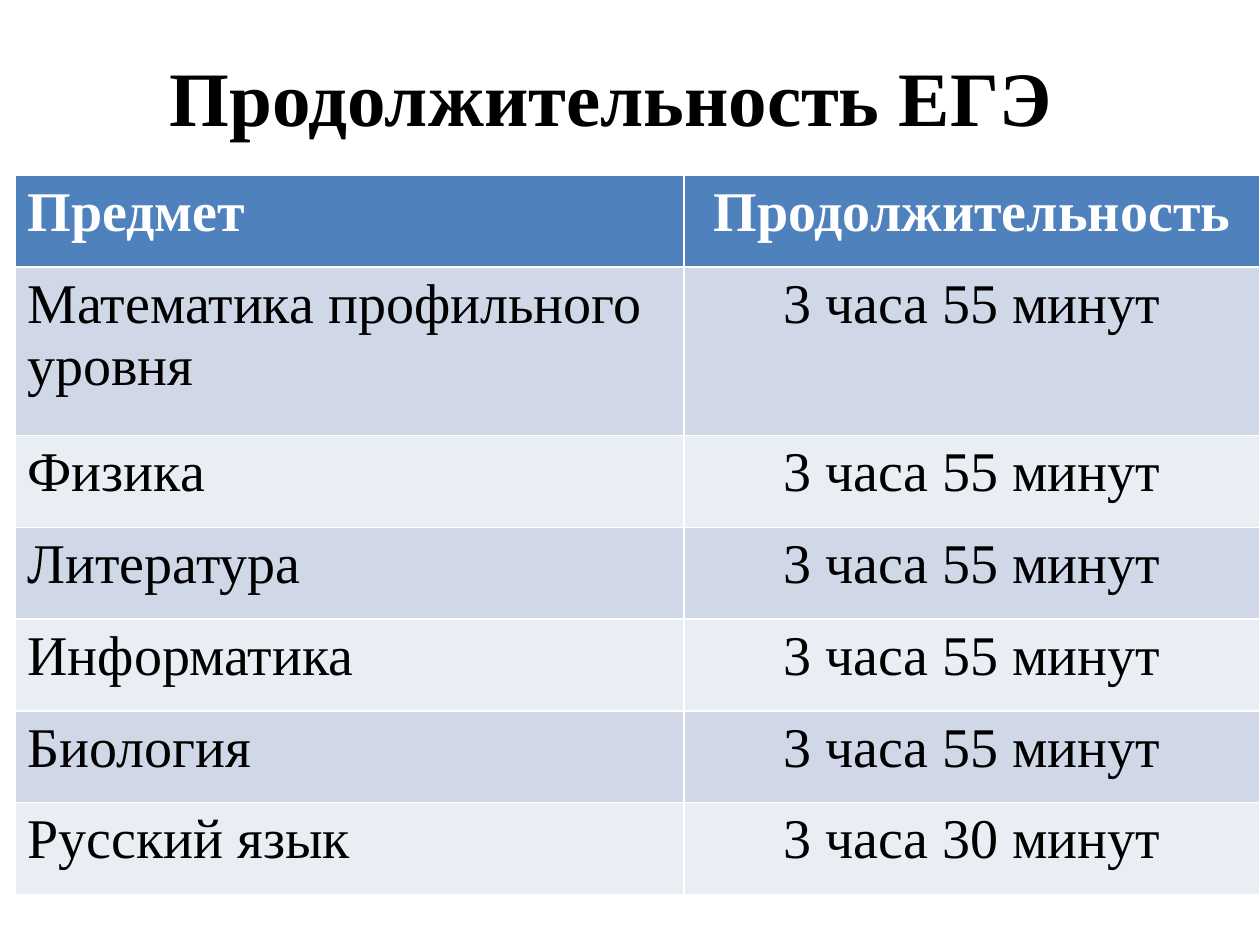
"""Build a slide with a table of exam durations."""
import pptx
import pptx.dml.color
import pptx.enum.text
import pptx.util

Cm = pptx.util.Cm
CENTER = pptx.enum.text.PP_ALIGN.CENTER
FONT = "Times New Roman"
COLORS = {
    "text": "000000",
    "header_text": "FFFFFF",
    "header": "4F81BD",
    "odd_row": "D0D8E8",
    "even_row": "E9EDF4",
}
COLUMN_WIDTHS = [13.49, 11.61]
ROW_HEIGHTS = [1.85, 3.4] + [1.85] * 5
ROWS = [
    ("Предмет", "Продолжительность"),
    ("Математика профильного уровня", "3 часа 55 минут"),
    ("Физика", "3 часа 55 минут"),
    ("Литература", "3 часа 55 минут"),
    ("Информатика", "3 часа 55 минут"),
    ("Биология", "3 часа 55 минут"),
    ("Русский язык", "3 часа 30 минут"),
]


def color(name):
    return pptx.dml.color.RGBColor.from_string(COLORS[name])


def format_text(paragraph, size, bold, color_name):
    for run in paragraph.runs:
        run.font.name = FONT
        run.font.size = pptx.util.Pt(size)
        run.font.bold = bold
        run.font.color.rgb = color(color_name)


presentation = pptx.Presentation()
presentation.slide_width = Cm(25.4)
presentation.slide_height = Cm(19.05)
slide = presentation.slides.add_slide(presentation.slide_layouts[6])

title = slide.shapes.add_textbox(Cm(0.89), Cm(0.74), Cm(22.86), Cm(2.36))
title.text_frame.word_wrap = True
title.text_frame.vertical_anchor = pptx.enum.text.MSO_ANCHOR.MIDDLE
title.text_frame.text = "Продолжительность ЕГЭ"
title_paragraph = title.text_frame.paragraphs[0]
title_paragraph.alignment = CENTER
format_text(title_paragraph, 44, True, "text")

table = slide.shapes.add_table(
    len(ROWS), len(COLUMN_WIDTHS), Cm(0.3), Cm(3.53),
    Cm(sum(COLUMN_WIDTHS)), Cm(sum(ROW_HEIGHTS)),
).table
for column, width in zip(table.columns, COLUMN_WIDTHS):
    column.width = Cm(width)

for row_index, (row, height, texts) in enumerate(zip(table.rows, ROW_HEIGHTS, ROWS)):
    row.height = Cm(height)
    is_header = row_index == 0
    fill_name = "header" if is_header else "odd_row" if row_index % 2 else "even_row"
    for column_index, (cell, text) in enumerate(zip(row.cells, texts)):
        cell.fill.solid()
        cell.fill.fore_color.rgb = color(fill_name)
        cell.text_frame.text = text
        paragraph = cell.text_frame.paragraphs[0]
        if column_index == 1:
            paragraph.alignment = CENTER
        format_text(paragraph, 32, is_header, "header_text" if is_header else "text")

presentation.save("out.pptx")
